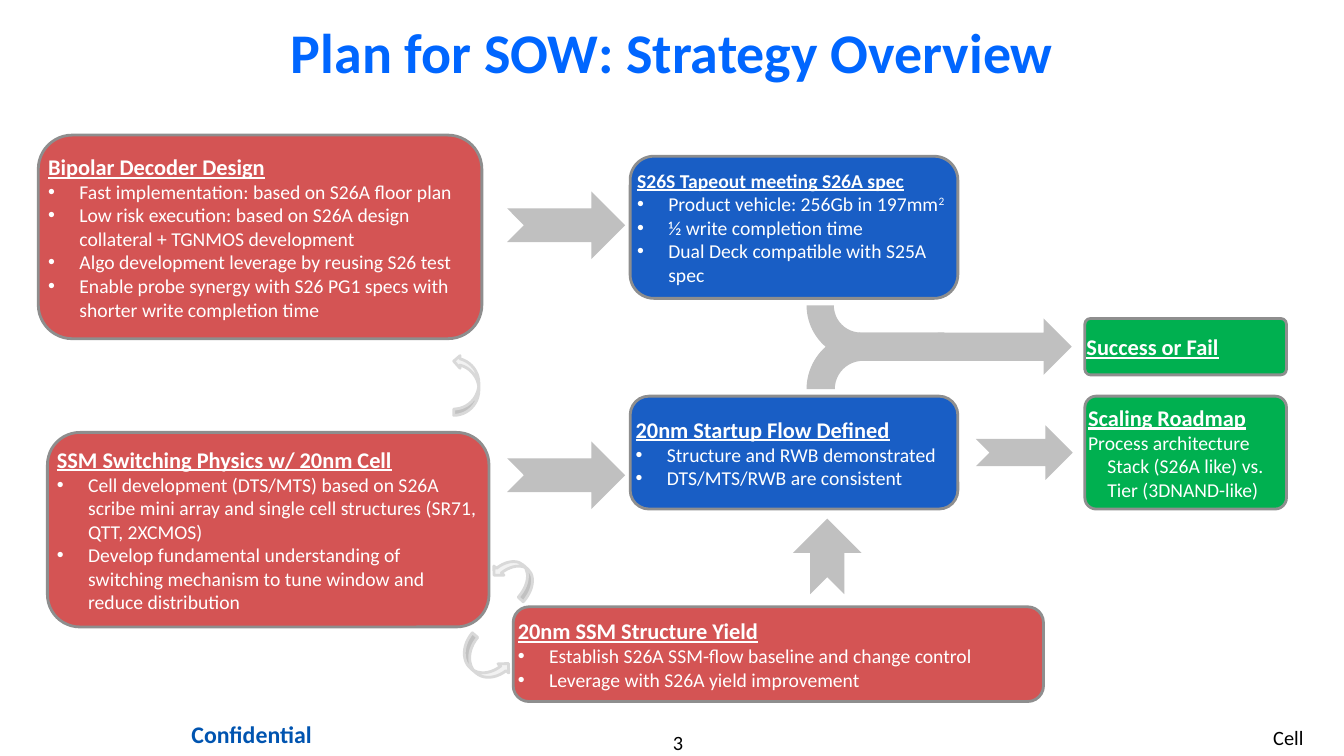
import pptx
import pptx.util
import pptx.dml.color
import pptx.enum.shapes
import pptx.enum.text
from lxml import etree
from pptx.oxml.ns import qn

Inches, Pt = pptx.util.Inches, pptx.util.Pt
SHAPE = pptx.enum.shapes.MSO_SHAPE
ALIGN = pptx.enum.text.PP_ALIGN
ANCHOR = pptx.enum.text.MSO_ANCHOR

FONT = "Calibri"
COLORS = {
    "title": "0066FF", "confidential": "0054B0", "black": "000000", "white": "FFFFFF",
    "red": "C00000", "blue": "004DBF", "green": "00B050", "border": "8E8E8E",
    "arrow": "C0C0C0", "curl": "F2F2F2", "curl border": "D9D9D9",
}
OPACITY = {"red": 67, "blue": 90, "green": 100}
TITLE = "Plan for SOW: Strategy Overview"

# Left, top, width, height, colour, corner, heading, heading size, lines
BOXES = [
    (0.38, 1.34, 4.4, 2.02, "red", None, "Bipolar Decoder Design", 16, [
        "Fast implementation: based on S26A floor plan",
        "Low risk execution: based on S26A design collateral + TGNMOS development",
        "Algo development leverage by reusing S26 test",
        "Enable probe synergy with S26 PG1 specs with shorter write completion time"]),
    (0.47, 4.29, 4.38, 1.93, "red", None, "SSM Switching Physics w/ 20nm Cell", 16, [
        "Cell development (DTS/MTS) based on S26A scribe mini array and single cell "
        "structures (SR71, QTT, 2XCMOS)",
        "Develop fundamental understanding of switching mechanism to tune window and "
        "reduce distribution"]),
    (5.09, 6.02, 5.26, 0.94, "red", None, "20nm SSM Structure Yield", 16, [
        "Establish S26A SSM-flow baseline and change control",
        "Leverage with S26A yield improvement"]),
    (6.25, 3.93, 3.25, 1.12, "blue", None, "20nm Startup Flow Defined", 16, [
        "Structure and RWB demonstrated",
        "DTS/MTS/RWB are consistent"]),
    (6.25, 1.55, 3.25, 1.41, "blue", None, "S26S Tapeout meeting S26A spec", 14, [
        ("Product vehicle: 256Gb in 197mm", "2"),
        "½ write completion time",
        "Dual Deck compatible with S25A spec"]),
    (10.76, 3.16, 2, 0.56, "green", 0.1, "Success or Fail", 16, []),
    (10.76, 3.93, 2, 1.12, "green", 0.1, "Scaling Roadmap", 16, [
        "Process architecture\nStack (S26A like) vs.\nTier (3DNAND-like)"]),
]

# Left, top, width, height, rotation
NOTCHED_ARROWS = [
    (5.03, 4.38, 1.17, 0.67, 0),
    (5.03, 1.9, 1.17, 0.67, 0),
    (7.83, 5.18, 0.75, 0.68, 270),
    (9.3, 3.16, 1.33, 0.56, 0),
    (9.68, 4.22, 0.96, 0.54, 0),
]
# Left, top, width, height, mirrored top to bottom
MERGING_ARROWS = [(8, 3.3, 1.5, 0.56, False), (8, 3.03, 1.5, 0.54, True)]
MERGING_SHAPE = (0.5, 0.25, 0.25, 1)
# Preset, left, top, width, height, rotation
CURLED_ARROWS = [
    (SHAPE.CURVED_UP_ARROW, 4.53, 6.42, 0.54, 0.28, 40.4),
    (SHAPE.CURVED_UP_ARROW, 4.88, 5.58, 0.46, 0.27, 222.2),
    (SHAPE.CURVED_RIGHT_ARROW, 4.5, 3.52, 0.25, 0.6, 180),
]
# Text, left, top, width, height, margins (x, y), size, colour, bold, alignment
FOOTERS = [
    ("3", 5.56, 7.24, 2.33, 0.24, (0, 0), 14.5, "black", False, ALIGN.CENTER),
    ("Cell", 12.53, 7.15, 0.7, 0.35, (0.1, 0.05), 14.5, "black", False, ALIGN.LEFT),
    ("Confidential", 1.55, 7.08, 1.89, 0.41, (0.12, 0.06), 17, "confidential", True, ALIGN.CENTER),
]


def rgb(name):
    return pptx.dml.color.RGBColor.from_string(COLORS[name])


def style(para, size, color, bold=False, underline=False):
    for span in para.runs:
        span.font.name = FONT
        span.font.size = Pt(size)
        span.font.bold = bold
        span.font.underline = underline
        span.font.color.rgb = rgb(color)


def set_margins(frame, x, y):
    frame.margin_left = frame.margin_right = Inches(x)
    frame.margin_top = frame.margin_bottom = Inches(y)


def indent(para, depth, bullet=False):
    props = para._p.get_or_add_pPr()
    props.set("marL", str(Inches(depth)))
    props.set("indent", str(-Inches(depth)))
    if bullet:
        etree.SubElement(props, qn("a:buFont")).set("typeface", "Arial")
        etree.SubElement(props, qn("a:buChar")).set("char", "•")


def add_shape(preset, place, fill, line=None, rotation=0):
    shape = page.shapes.add_shape(preset, *map(Inches, place))
    shape.shadow.inherit = False
    shape.rotation = rotation
    shape.fill.solid()
    shape.fill.fore_color.rgb = rgb(fill)
    if line:
        shape.line.color.rgb = rgb(line)
        shape.line.width = Pt(2)
    else:
        shape.line.fill.background()
    return shape


def add_box(left, top, width, height, color, corner, heading, size, lines):
    box = add_shape(SHAPE.ROUNDED_RECTANGLE, (left, top, width, height), color, "border")
    if corner:
        box.adjustments[0] = corner
    if OPACITY[color] < 100:
        tint = box._element.spPr.find(qn("a:solidFill"))[0]
        etree.SubElement(tint, qn("a:alpha")).set("val", str(OPACITY[color] * 1000))
    frame = box.text_frame
    frame.word_wrap = True
    frame.vertical_anchor = ANCHOR.MIDDLE
    set_margins(frame, 0, 0)
    frame.text = heading
    indent(frame.paragraphs[0], 0.19)
    style(frame.paragraphs[0], size, "white", True, True)
    for line in lines:
        para = frame.add_paragraph()
        text, power = line if isinstance(line, tuple) else (line, "")
        para.text = text
        if power:
            span = para.add_run()
            span.text = power
            span.font._element.set("baseline", "30000")
        bulleted = color != "green"
        indent(para, 0.31 if bulleted else 0.19, bulleted)
        style(para, 14, "white")
    for para in frame.paragraphs:
        para.alignment = ALIGN.LEFT


deck = pptx.Presentation()
deck.slide_width, deck.slide_height = Inches(13.33), Inches(7.5)
page = deck.slides.add_slide(deck.slide_layouts[5])

# Title
title = page.shapes.title
title.left, title.top, title.width, title.height = map(Inches, (1, 0.17, 11.33, 0.67))
title.text_frame.text = TITLE
title.text_frame.vertical_anchor = ANCHOR.MIDDLE
title.text_frame.paragraphs[0].alignment = ALIGN.CENTER
style(title.text_frame.paragraphs[0], 40, "title", True)

# Footer
for text, left, top, width, height, margins, size, color, bold, align in FOOTERS:
    box = page.shapes.add_textbox(*map(Inches, (left, top, width, height)))
    box.text_frame.word_wrap = True
    set_margins(box.text_frame, *margins)
    box.text_frame.text = text
    box.text_frame.paragraphs[0].alignment = align
    style(box.text_frame.paragraphs[0], size, color, bold)

# Plan boxes
for entry in BOXES:
    add_box(*entry)

# Arrows between the boxes
for *place, rotation in NOTCHED_ARROWS:
    add_shape(SHAPE.NOTCHED_RIGHT_ARROW, place, "arrow", rotation=rotation)
for *place, mirrored in MERGING_ARROWS:
    arrow = add_shape(SHAPE.BENT_ARROW, place, "arrow")
    for index, value in enumerate(MERGING_SHAPE):
        arrow.adjustments[index] = value
    if mirrored:
        arrow._element.spPr.find(qn("a:xfrm")).set("flipV", "1")
for preset, *place, rotation in CURLED_ARROWS:
    add_shape(preset, place, "curl", "curl border", rotation)

deck.save("out.pptx")
